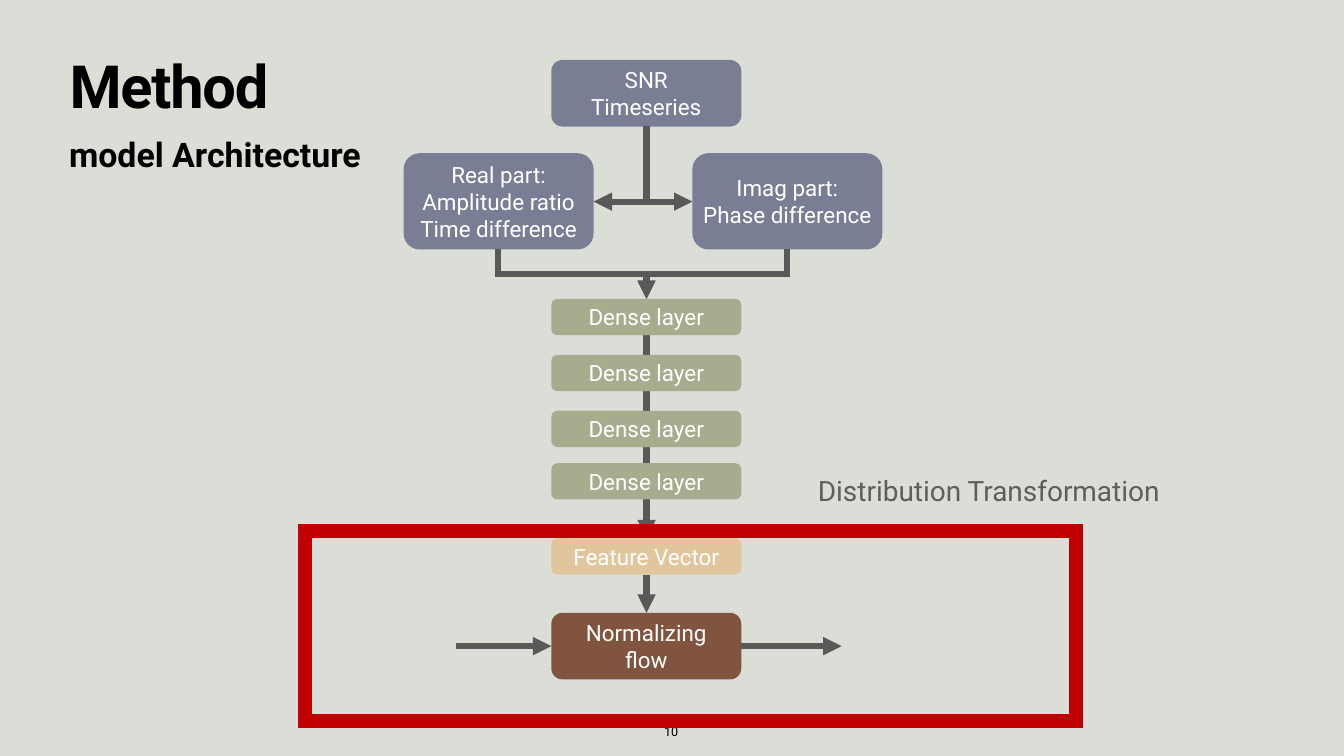
from pptx import Presentation
from pptx.dml.color import RGBColor
from pptx.enum import shapes as sh, text as tx
from pptx.oxml import ns
from pptx.util import Inches, Pt
from lxml import etree

tint = RGBColor.from_string
GREY = "595959"
MID = 12.83


def write(frame, words, size, hue, pad=0.06, bold=False,
          align=tx.PP_ALIGN.CENTER, anchor=tx.MSO_ANCHOR.MIDDLE, wrap=True):
    frame.text = words
    frame.word_wrap = wrap
    frame.auto_size = tx.MSO_AUTO_SIZE.NONE
    frame.vertical_anchor = anchor
    frame.margin_left = frame.margin_right = Inches(pad)
    frame.margin_top = frame.margin_bottom = Inches(pad)
    for para in frame.paragraphs:
        para.alignment = align
        para.space_before = Pt(0)
        for run in para.runs:
            run.font.name = "Roboto"
            run.font.size = Pt(size)
            run.font.bold = bold
            run.font.color.rgb = tint(hue)


def link(x1, y1, x2, y2, bend=None, width=8.75):
    line = slide.shapes.add_connector(
        sh.MSO_CONNECTOR.STRAIGHT, Inches(x1), Inches(y1), Inches(x2), Inches(y2))
    line.line.color.rgb = tint(GREY)
    line.line.width = Pt(width)
    prop = line.element.spPr
    if bend:
        wide, high = y2 - y1, abs(x2 - x1)
        line.left = Inches((x1 + x2 - wide) / 2)
        line.top = Inches((y1 + y2 - high) / 2)
        line.width, line.height = Inches(wide), Inches(high)
        right = x2 > x1
        frame = prop.find(ns.qn("a:xfrm"))
        frame.set("rot", str((270 if right else 90) * 60000))
        frame.set("flipH", "1" if right else "0")
        prop.find(ns.qn("a:prstGeom")).set("prst", bend)
    edge = prop.find(ns.qn("a:ln"))
    etree.SubElement(edge, ns.qn("a:miter")).set("lim", "800000")
    etree.SubElement(edge, ns.qn("a:tailEnd")).set("type", "triangle")
    etree.SubElement(prop, ns.qn("a:effectLst"))


deck = Presentation()
deck.slide_width, deck.slide_height = Inches(26.67), Inches(15)
slide = deck.slides.add_slide(deck.slide_layouts[1])
slide.background.fill.solid()
slide.background.fill.fore_color.rgb = tint("DBDDD7")

title, body = slide.placeholders
for hold, top, high in ((title, 1.18, 1.57), (body, 2.6, 1.02)):
    hold.left, hold.top = Inches(1.32), Inches(top)
    hold.width, hold.height = Inches(24.03), Inches(high)

left = dict(bold=True, align=tx.PP_ALIGN.LEFT, anchor=tx.MSO_ANCHOR.TOP)
write(title.text_frame, "Method", 85, "000000", **left)
head = title.text_frame.paragraphs[0]
head.line_spacing = 0.8
head.runs[0].font._element.set("spc", "-170")

write(body.text_frame, "model Architecture", 48.4, "000000", pad=0.05, **left)
rule = body.text_frame.paragraphs[0]._p.get_or_add_pPr()
rule.set("marL", "0")
rule.set("indent", "0")
etree.SubElement(rule, ns.qn("a:buNone"))

page = slide.shapes.add_textbox(Inches(13.12), Inches(14.31), Inches(0.4), Inches(0.41))
write(page.text_frame, "10", 18, "000000", anchor=tx.MSO_ANCHOR.BOTTOM, wrap=False)

link(MID, 6.65, MID, 10.68)

boxes = [
    ("SNR\nTimeseries", 10.94, 1.19, 1.32, "797E94"),
    ("Real part:\nAmplitude ratio\nTime difference", 8.01, 3.04, 1.91, "797E94"),
    ("Imag part:\nPhase difference", 13.74, 3.04, 1.91, "797E94"),
]
boxes += [("Dense layer", 10.94, top, 0.72, "A9AB8E") for top in (5.93, 7.04, 8.15, 9.19)]
boxes += [
    ("Feature Vector", 10.94, 10.68, 0.72, "E1C59D"),
    ("Normalizing\nflow", 10.94, 12.16, 1.32, "80543E"),
]
for words, x, y, high, hue in boxes:
    box = slide.shapes.add_shape(
        sh.MSO_SHAPE.ROUNDED_RECTANGLE, Inches(x), Inches(y), Inches(3.77), Inches(high))
    box.shadow.inherit = False
    box.fill.solid()
    box.fill.fore_color.rgb = tint(hue)
    box.line.fill.background()
    write(box.text_frame, words, 32, "FFFFFF")

for x in (13.74, 11.78):
    link(MID, 2.51, x, 4, "bentConnector2")
for x, width in ((9.89, 8.75), (15.62, 8)):
    link(x, 4.95, MID, 5.93, "bentConnector3", width)
link(MID, 11.4, MID, 12.16)
for x1, x2 in ((9.05, 10.94), (14.71, 16.7)):
    link(x1, 12.82, x2, 12.82)

mark = slide.shapes.add_shape(
    sh.MSO_SHAPE.RECTANGLE, Inches(6.05), Inches(10.53), Inches(15.31), Inches(3.78))
mark.shadow.inherit = False
mark.fill.background()
mark.line.color.rgb = tint("C00000")
mark.line.width = Pt(20)
edge = mark.element.spPr.find(ns.qn("a:ln"))
etree.SubElement(edge, ns.qn("a:miter")).set("lim", "800000")

note = slide.shapes.add_textbox(Inches(15.62), Inches(9.34), Inches(8), Inches(0.79))
write(note.text_frame, "Distribution Transformation", 40, "5E5E5E")

deck.save("out.pptx")
